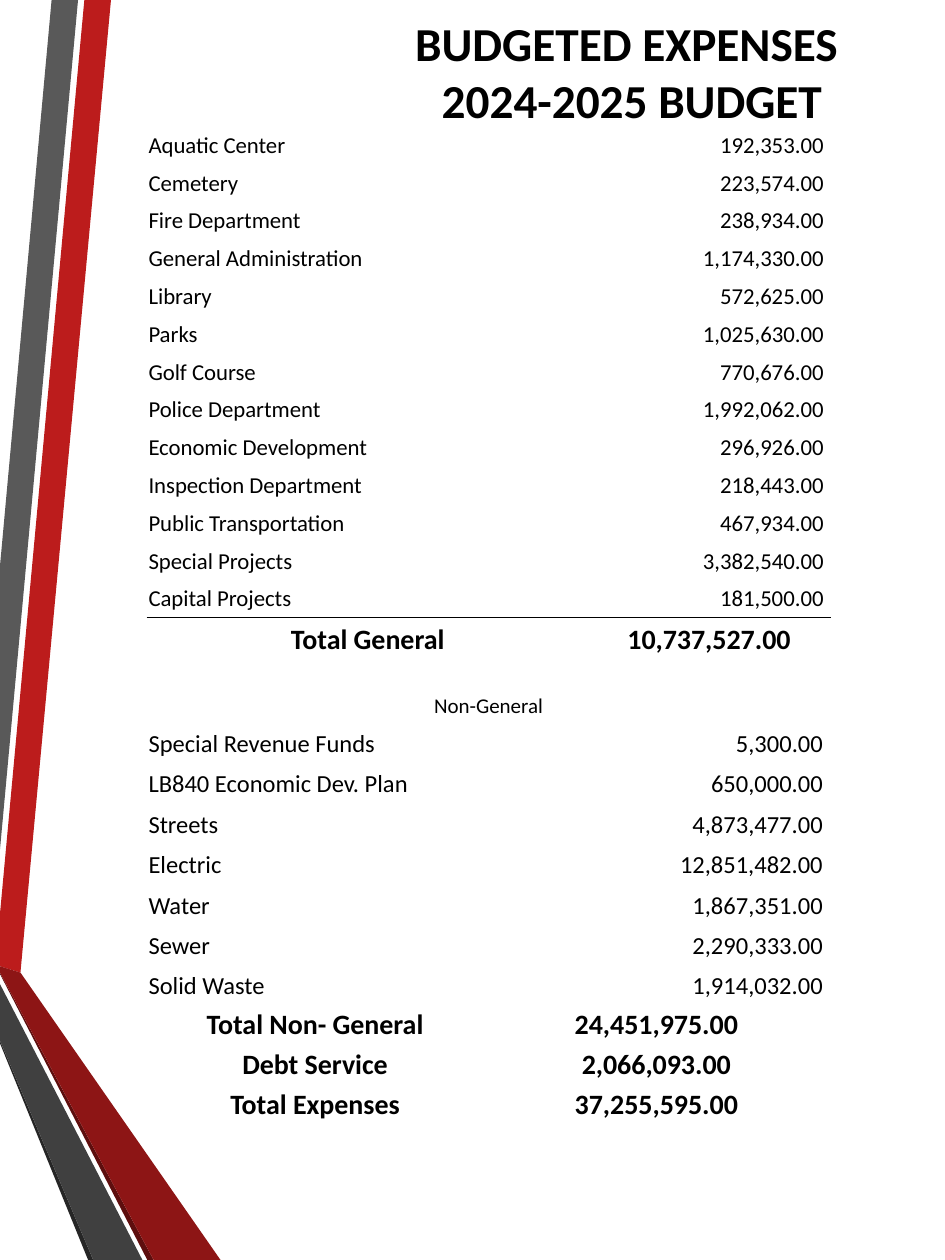
from dataclasses import dataclass

from lxml import etree
from pptx import Presentation
from pptx import util as u
from pptx.dml.color import RGBColor
from pptx.enum import text
from pptx.oxml.ns import qn

LEFT, CENTER, RIGHT = text.PP_ALIGN.LEFT, text.PP_ALIGN.CENTER, text.PP_ALIGN.RIGHT
MIDDLE, BOTTOM = text.MSO_ANCHOR.MIDDLE, text.MSO_ANCHOR.BOTTOM


@dataclass(frozen=True)
class Theme:
    font: str = "Calibri"
    ink: str = "000000"
    red: str = "BC1C1C"
    dark_red: str = "8D1515"
    deep_red: str = "5E0E0E"
    gray: str = "595959"
    dark_gray: str = "404040"
    deep_gray: str = "262626"
    title: float = 27
    total: float = 16
    fund: float = 14
    department: float = 13
    caption: float = 12


def apply(target, formats):
    for name, value in formats.items():
        setattr(target, name, value)


class BudgetPage:
    def __init__(self, slide, theme):
        self.slide = slide
        self.theme = theme

    def style(self, paragraph, size, bold, align):
        paragraph.alignment = align
        for run in paragraph.runs:
            apply(run.font, {"name": self.theme.font, "size": u.Pt(size), "bold": bold})
            run.font.color.rgb = RGBColor.from_string(self.theme.ink)

    def ribbon(self, color, points):
        """Draw a filled outline; points are in slide points, kept to a tenth."""
        tenths = [(x * 10, y * 10) for x, y in points]
        builder = self.slide.shapes.build_freeform(*tenths[0], scale=u.Pt(0.1))
        builder.add_line_segments(tenths[1:], close=True)
        band = builder.convert_to_shape()
        band.shadow.inherit = False
        band.fill.solid()
        band.fill.fore_color.rgb = RGBColor.from_string(color)
        band.line.fill.background()

    def title(self, wording, left, top, width, height):
        heading = self.slide.shapes.title
        apply(heading, {"left": u.Pt(left), "top": u.Pt(top),
                        "width": u.Pt(width), "height": u.Pt(height)})
        frame = heading.text_frame
        apply(frame, {"text": wording, "word_wrap": True, "vertical_anchor": MIDDLE,
                      "auto_size": text.MSO_AUTO_SIZE.NONE})
        self.style(frame.paragraphs[0], self.theme.title, True, CENTER)

    def table(self, left, top, widths, heights):
        grid = self.slide.shapes.add_table(
            len(heights), len(widths), u.Pt(left), u.Pt(top),
            u.Pt(sum(widths)), u.Pt(sum(heights))).table
        apply(grid, {"first_row": False, "horz_banding": False})
        for column, width in zip(grid.columns, widths):
            column.width = u.Pt(width)
        for row, height in zip(grid.rows, heights):
            row.height = u.Pt(height)
        for cell in grid.iter_cells():
            cell.fill.background()
        return grid

    def cell(self, cell, wording, size, align, anchor, bold=False):
        # Amounts stand one space's width off the right edge.
        right = 0.7 + size * 0.23 if align == RIGHT else 0.7
        apply(cell, {"text": wording, "vertical_anchor": anchor,
                     "margin_left": u.Pt(0.7), "margin_right": u.Pt(right),
                     "margin_top": u.Pt(0.7), "margin_bottom": 0})
        self.style(cell.text_frame.paragraphs[0], size, bold, align)

    def rows(self, grid, first, entries, size, anchor):
        for index, (label, amount) in enumerate(entries, first):
            self.cell(grid.cell(index, 0), label, size, LEFT, anchor)
            self.cell(grid.cell(index, 1), amount, size, RIGHT, anchor)

    def totals(self, grid, first, entries, anchor):
        for index, entry in enumerate(entries, first):
            for column, wording in enumerate(entry):
                self.cell(grid.cell(index, column), wording,
                          self.theme.total, CENTER, anchor, bold=True)

    def rule_above(self, grid, row):
        """Rule a line between the given row and the one before it."""
        for index, edge in ((row - 1, "a:lnB"), (row, "a:lnT")):
            for cell in grid.rows[index].cells:
                line = etree.Element(qn(edge), w=str(u.Pt(1)))
                fill = etree.SubElement(line, qn("a:solidFill"))
                etree.SubElement(fill, qn("a:srgbClr"), val=self.theme.ink)
                cell.fill.background()
                cell._tc.get_or_add_tcPr().insert(0, line)


DEPARTMENTS = [
    ("Aquatic Center", "192,353.00"),
    ("Cemetery", "223,574.00"),
    ("Fire Department", "238,934.00"),
    ("General Administration", "1,174,330.00"),
    ("Library", "572,625.00"),
    ("Parks", "1,025,630.00"),
    ("Golf Course", "770,676.00"),
    ("Police Department", "1,992,062.00"),
    ("Economic Development", "296,926.00"),
    ("Inspection Department", "218,443.00"),
    ("Public Transportation", "467,934.00"),
    ("Special Projects", "3,382,540.00"),
    ("Capital Projects", "181,500.00"),
]
GENERAL_TOTAL = [("Total General", "10,737,527.00")]
FUNDS = [
    ("Special Revenue Funds", "5,300.00"),
    ("LB840 Economic Dev. Plan", "650,000.00"),
    ("Streets", "4,873,477.00"),
    ("Electric", "12,851,482.00"),
    ("Water", "1,867,351.00"),
    ("Sewer", "2,290,333.00"),
    ("Solid Waste", "1,914,032.00"),
]
GRAND_TOTALS = [
    ("Total Non- General", "24,451,975.00"),
    ("Debt Service", "2,066,093.00"),
    ("Total Expenses", "37,255,595.00"),
]


def main():
    theme = Theme()
    deck = Presentation()
    apply(deck, {"slide_width": u.Pt(540), "slide_height": u.Pt(720)})
    page = BudgetPage(deck.slides.add_slide(deck.slide_layouts[5]), theme)

    ribbons = [
        (theme.red, [(0, 522), (0, 552.2), (11.7, 555.8), (63.4, 0), (48.2, 0)]),
        (theme.gray, [(44.6, 0), (29.5, 0), (0, 323.3), (0, 485.3)]),
        (theme.deep_gray, [(0, 594.7), (0, 596.2), (50.4, 720), (53.3, 720)]),
        (theme.deep_red, [(0, 555.8), (0, 556.6), (84.2, 720), (87.8, 720)]),
        (theme.dark_red, [(0, 555.8), (87.8, 720), (126, 720), (11.7, 555.8), (0, 552.2)]),
        (theme.dark_gray, [(0, 594.7), (53.3, 720), (81.4, 720), (0, 562.3)]),
    ]
    for color, points in ribbons:
        page.ribbon(color, points)

    page.title("BUDGETED EXPENSES \v2024-2025 BUDGET", 162, 10.8, 398.2, 59.8)

    general = page.table(84.2, 72, [252, 138], [21.6] * len(DEPARTMENTS) + [25.2])
    page.rows(general, 0, DEPARTMENTS, theme.department, MIDDLE)
    page.totals(general, len(DEPARTMENTS), GENERAL_TOTAL, MIDDLE)
    page.rule_above(general, len(DEPARTMENTS))

    other_count = len(FUNDS) + len(GRAND_TOTALS)
    other = page.table(84.2, 384, [191.8, 198.2], [26.7] + [23.1] * other_count)
    other.cell(0, 0).merge(other.cell(0, 1))
    page.cell(other.cell(0, 0), "Non-General", theme.caption, CENTER, BOTTOM)
    page.rows(other, 1, FUNDS, theme.fund, BOTTOM)
    page.totals(other, 1 + len(FUNDS), GRAND_TOTALS, BOTTOM)

    deck.save("out.pptx")


if __name__ == "__main__":
    main()
